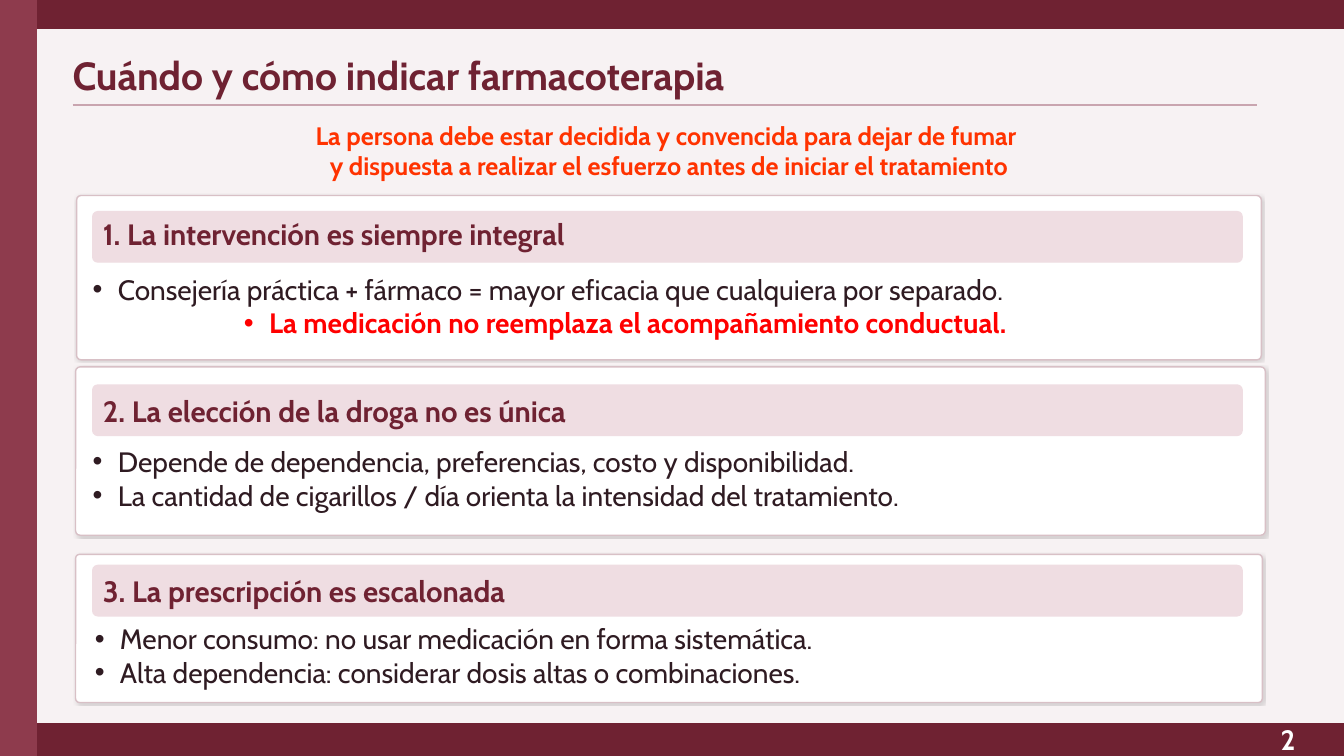
from lxml import etree
from pptx import Presentation
from pptx.dml.color import RGBColor
from pptx.enum.shapes import MSO_CONNECTOR as CONN, MSO_SHAPE as SHAPE
from pptx.enum.text import MSO_ANCHOR as ANCHOR, PP_ALIGN as ALIGN
from pptx.oxml.ns import qn
from pptx.util import Inches, Pt

# Content
COLORS = {
    "bg": "F7F2F3", "wine": "6F2232", "rose": "8E3B4D", "rule": "C9A5AF",
    "card": "FFFFFF", "edge": "D8C0C6", "band": "EFDDE2", "ink": "2F1B22",
    "alert": "FF0000", "orange": "FF3300", "white": "FFFFFF", "shadow": "000000",
}
TITLE = "Cuándo y cómo indicar farmacoterapia"
MESSAGE = [
    "La persona debe estar decidida y convencida para dejar de fumar ",
    "y dispuesta a realizar el esfuerzo antes de iniciar el tratamiento",
]
PAGE = "2"
# Bullets are (text, level)
CARDS = [
    {"box": (0.76, 1.94, 11.75, 1.63), "band_y": 2.1, "head_y": 2.07,
     "list": (0.92, 2.7, 11.44, 0.76),
     "head": "1. La intervención es siempre integral",
     "bullets": [
         ("Consejería práctica + fármaco = mayor eficacia que cualquiera por separado.", 0),
         ("La medicación no reemplaza el acompañamiento conductual.", 3)]},
    {"box": (0.75, 3.64, 11.8, 1.67), "band_y": 3.82, "head_y": 3.82,
     "list": (0.92, 4.41, 11.4, 0.76),
     "head": "2. La elección de la droga no es única",
     "bullets": [
         ("Depende de dependencia, preferencias, costo y disponibilidad.", 0),
         ("La cantidad de cigarillos / día orienta la intensidad del tratamiento.", 0)]},
    {"box": (0.75, 5.5, 11.77, 1.47), "band_y": 5.61, "head_y": 5.61,
     "list": (0.94, 6.17, 11.44, 0.64),
     "head": "3. La prescripción es escalonada",
     "bullets": [
         ("Menor consumo: no usar medicación en forma sistemática.", 0),
         ("Alta dependencia: considerar dosis altas o combinaciones.", 0)]},
]

# Formats
TITLE_FMT = {"size": 28, "bold": True, "color": "wine"}
HEAD_FMT = {"size": 21, "bold": True, "color": "wine"}
BODY_FMT = {"size": 20, "bold": False, "color": "ink"}
ALERT_FMT = {"size": 20, "bold": True, "color": "alert"}
MESSAGE_FMT = {"size": 18, "bold": True, "color": "orange"}
PAGE_FMT = {"size": 20, "bold": True, "color": "white"}
FLUSH = dict.fromkeys(("margin_left", "margin_top", "margin_right", "margin_bottom"), 0)
MIDDLE = {**FLUSH, "vertical_anchor": ANCHOR.MIDDLE}

SLIDE_W, SLIDE_H = 13.33, 7.5
BAND_X, BAND_W, BAND_H = 0.92, 11.4, 0.5
HEAD_X, HEAD_W = 1.02, 11.12

prs = Presentation()
prs.slide_width, prs.slide_height = Inches(SLIDE_W), Inches(SLIDE_H)
s = prs.slides.add_slide(prs.slide_layouts[6])


def rgb(name):
    return RGBColor.from_string(COLORS[name])


def add_block(box, fill, line, kind=SHAPE.RECTANGLE, radius=None):
    sp = s.shapes.add_shape(kind, *map(Inches, box))
    sp.shadow.inherit = False
    sp.fill.solid()
    sp.fill.fore_color.rgb = rgb(fill)
    sp.line.color.rgb = rgb(line)
    sp.line.width = Pt(1)
    if radius is not None:
        sp.adjustments[0] = radius
    return sp


def add_shadow(sp):
    effects = sp._element.spPr.find(qn("a:effectLst"))
    shadow = etree.SubElement(effects, qn("a:outerShdw"), blurRad=str(Pt(1.2)),
                              dist=str(Pt(0.6)), dir=str(45 * 60000), algn="bl",
                              rotWithShape="0")
    color = etree.SubElement(shadow, qn("a:srgbClr"), val=COLORS["shadow"])
    etree.SubElement(color, qn("a:alpha"), val="12000")


def add_bullet(p, level):
    p.level = level
    pPr = p._p.get_or_add_pPr()
    pPr.set("marL", str(Inches(0.25 + 0.5 * level)))
    pPr.set("indent", str(Inches(-0.25)))
    etree.SubElement(pPr, qn("a:buFont"), typeface="Arial")
    etree.SubElement(pPr, qn("a:buChar"), char="•")


def add_text(box, lines, frame=None, align=ALIGN.LEFT):
    """Each line is (text, format, bullet level or None)."""
    tf = s.shapes.add_textbox(*map(Inches, box)).text_frame
    for name, value in {"word_wrap": True, **(frame or {})}.items():
        setattr(tf, name, value)
    for i, (text, fmt, level) in enumerate(lines):
        p = tf.add_paragraph() if i else tf.paragraphs[0]
        p.alignment = align
        if level is not None:
            add_bullet(p, level)
        r = p.add_run()
        r.text = text
        font = {"name": "Cabin", "size": Pt(fmt["size"]), "bold": fmt["bold"]}
        for name, value in font.items():
            setattr(r.font, name, value)
        r.font.color.rgb = rgb(fmt["color"])


# Background and frame
s.background.fill.solid()
s.background.fill.fore_color.rgb = rgb("bg")
add_block((0, 0, SLIDE_W, 0.28), "wine", "wine")
add_block((0, 7.18, SLIDE_W, 0.32), "wine", "wine")
add_block((0, 0, 0.36, SLIDE_H), "rose", "rose")

# Title and rule
add_text((0.72, 0.43, 11.6, 0.62), [(TITLE, TITLE_FMT, None)], MIDDLE)
rule = s.shapes.add_connector(CONN.STRAIGHT, *map(Inches, (0.72, 1.04, 12.47, 1.04)))
rule.line.color.rgb = rgb("rule")
rule.line.width = Pt(1)
etree.SubElement(rule._element.spPr, qn("a:effectLst"))

# Cards
for card in CARDS:
    add_shadow(add_block(card["box"], "card", "edge", SHAPE.ROUNDED_RECTANGLE, 0.027))
    add_block((BAND_X, card["band_y"], BAND_W, BAND_H), "band", "band",
              SHAPE.ROUNDED_RECTANGLE, 0.1)
    add_text((HEAD_X, card["head_y"], HEAD_W, BAND_H),
             [(card["head"], HEAD_FMT, None)], MIDDLE)
    add_text(card["list"],
             [(text, ALERT_FMT if level else BODY_FMT, level)
              for text, level in card["bullets"]], FLUSH)

# Page number and key message
add_text((12.55, 7.12, 0.45, 0.25), [(PAGE, PAGE_FMT, None)], align=ALIGN.CENTER)
add_text((1.02, 1.14, 11.23, 0.71), [(text, MESSAGE_FMT, None) for text in MESSAGE],
         align=ALIGN.CENTER)

prs.save("out.pptx")
